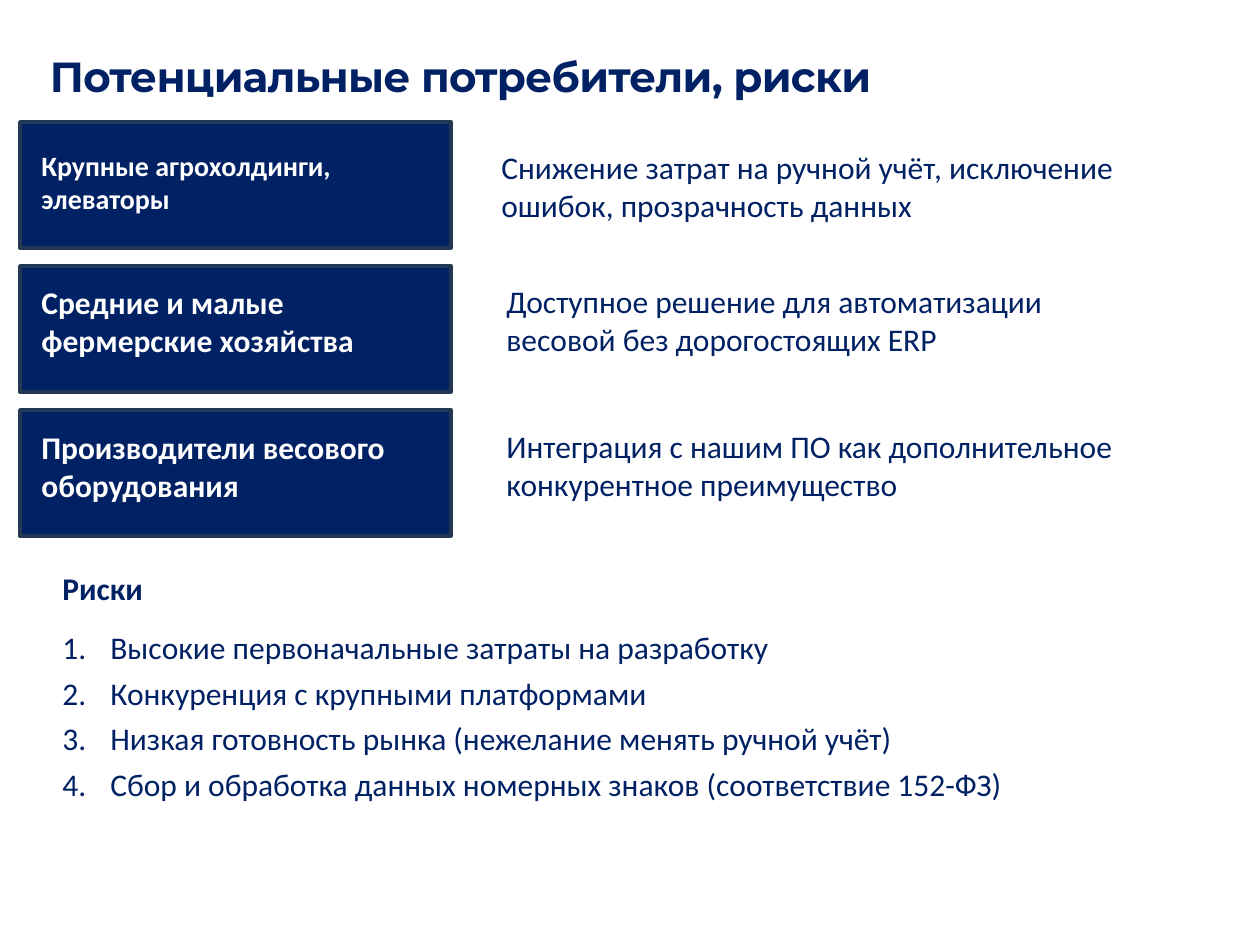
from lxml.etree import SubElement
from pptx import Presentation
from pptx.dml.color import RGBColor
from pptx.enum.shapes import MSO_SHAPE as Shape
from pptx.enum.text import MSO_ANCHOR as Anchor
from pptx.oxml.ns import qn
from pptx.util import Emu, Pt

PX_PER_INCH = 126
COLORS = {"navy": "002164", "outline": "233953", "white": "FFFFFF"}

ROW_TOP, ROW_PITCH = 122, 144
CARD_LEFT, CARD_WIDTH, CARD_HEIGHT = 20, 431, 126

# Each text: left, top, width, height, wording; the customer also has a size.
ROWS = [
    ((29, 142, 360, 81, "Крупные агрохолдинги, элеваторы", 16),
     (489, 142, 640, 89, "Снижение затрат на ручной учёт, исключение ошибок, прозрачность данных")),
    ((29, 277, 364, 89, "Средние и малые фермерские хозяйства", 18),
     (494, 276, 650, 89, "Доступное решение для автоматизации весовой без дорогостоящих ERP")),
    ((29, 422, 556, 89, "Производители весового оборудования", 18),
     (494, 421, 672, 89, "Интеграция с нашим ПО как дополнительное конкурентное преимущество")),
]
RISKS = [
    "Высокие первоначальные затраты на разработку",
    "Конкуренция с крупными платформами",
    "Низкая готовность рынка (нежелание менять ручной учёт)",
    "Сбор и обработка данных номерных знаков (соответствие 152-ФЗ)",
]


def px(count):
    return Emu(round(count * 914400 / PX_PER_INCH))


def color(name):
    return RGBColor.from_string(COLORS[name])


def add_card(page, top):
    card = page.shapes.add_shape(
        Shape.RECTANGLE, px(CARD_LEFT), px(top), px(CARD_WIDTH), px(CARD_HEIGHT))
    card.shadow.inherit = False
    card.fill.solid()
    card.fill.fore_color.rgb = color("navy")
    card.line.color.rgb = color("outline")
    card.line.width = Pt(2)


def add_frame(page, left, top, width, height):
    box = page.shapes.add_textbox(px(left), px(top), px(width), px(height))
    frame = box.text_frame
    frame.word_wrap = True
    frame.vertical_anchor = Anchor.TOP
    return frame


def add_span(para, text, size=18, ink="navy", bold=False, face="Calibri"):
    span = para.add_run()
    span.text = text
    span.font.name = face
    span.font.size = Pt(size)
    span.font.bold = bold
    span.font.color.rgb = color(ink)
    return span


def number_para(para):
    """Give the paragraph an automatic number and a hanging indent."""
    props = para._p.get_or_add_pPr()
    props.set("marL", str(px(48)))
    props.set("indent", str(-px(48)))
    SubElement(props, qn("a:buFont"), typeface="+mj-lt")
    SubElement(props, qn("a:buAutoNum"), type="arabicPeriod")


def add_title(page, text):
    frame = add_frame(page, 50, 50, 1134, 103)
    frame.margin_left = frame.margin_right = frame.margin_bottom = 0
    frame.margin_top = px(1)
    span = add_span(frame.paragraphs[0], text, 24, bold=True, face="Montserrat")
    span._r.get_or_add_rPr().set("spc", "-40")


def add_row(page, top, customer, benefit):
    add_card(page, top)
    *place, name, size = customer
    add_span(add_frame(page, *place).paragraphs[0], name, size, "white", bold=True)
    *place, text = benefit
    add_span(add_frame(page, *place).paragraphs[0], text)


def add_risks(page):
    frame = add_frame(page, 50, 563, 1094, 251)
    add_span(frame.paragraphs[0], "Риски", bold=True)
    for index, risk in enumerate(RISKS):
        para = frame.add_paragraph()
        para.space_before = Pt(4.5 if index else 12)
        number_para(para)
        add_span(para, risk)


def main():
    deck = Presentation()
    deck.slide_width, deck.slide_height = px(1260), px(945)
    page = deck.slides.add_slide(deck.slide_layouts[6])
    add_title(page, "Потенциальные потребители, риски")
    for index, (customer, benefit) in enumerate(ROWS):
        add_row(page, ROW_TOP + index * ROW_PITCH, customer, benefit)
    add_risks(page)
    deck.save("out.pptx")


if __name__ == "__main__":
    main()
